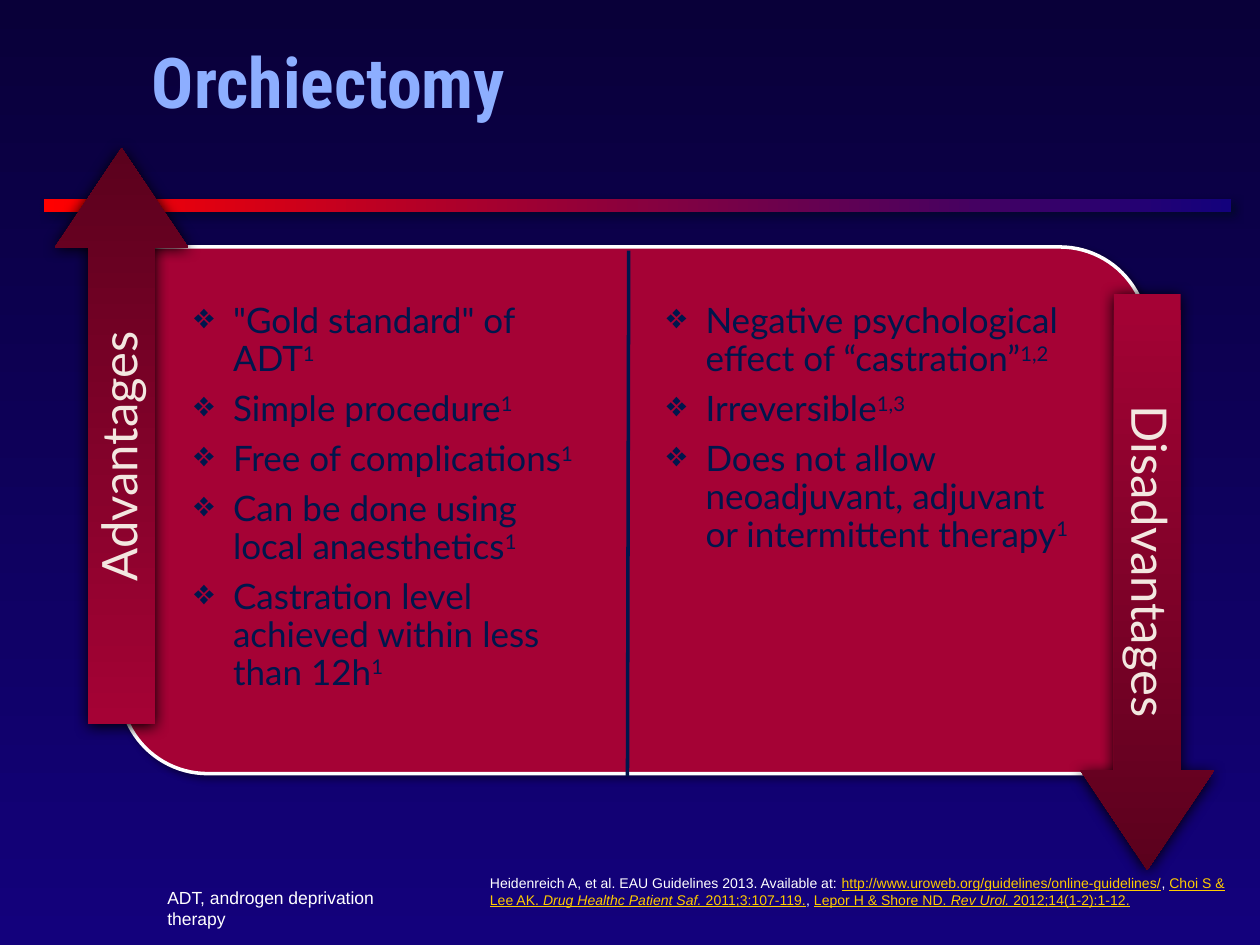
from lxml.etree import SubElement
from pptx import Presentation
from pptx.dml.color import RGBColor
from pptx.enum.shapes import MSO_CONNECTOR as Connector, MSO_SHAPE as Shape
from pptx.enum.text import MSO_ANCHOR as Anchor, MSO_AUTO_SIZE as AutoSize, PP_ALIGN as Align
from pptx.oxml.ns import qn
from pptx.util import Inches, Pt

NAVY, CRIMSON, WHITE, YELLOW = "00164C", "A50235", "FFFFFF", "FFCC00"
MIDNIGHT, INDIGO = "090039", "13017C"

ADVANTAGES = [
    ("\"Gold standard\" of ADT", "1"),
    ("Simple procedure", "1"),
    ("Free of complications", "1"),
    ("Can be done using local anaesthetics", "1"),
    ("Castration level achieved within less than 12h", "1"),
]
DISADVANTAGES = [
    ("Negative psychological effect of “castration”", "1,2"),
    ("Irreversible", "1,3"),
    ("Does not allow neoadjuvant, adjuvant or intermittent therapy", "1"),
]
REFERENCES = [
    ("Heidenreich A, et al. EAU Guidelines 2013. Available at: ", "plain"),
    ("http://www.uroweb.org/guidelines/online-guidelines/", "link"),
    (", ", "plain"),
    ("Choi S & Lee AK. ", "link"),
    ("Drug Healthc Patient Saf.", "journal"),
    (" 2011;3:107-119.", "link"),
    (", ", "plain"),
    ("Lepor H & Shore ND. ", "link"),
    ("Rev Urol.", "journal"),
    (" 2012;14(1-2):1-12.", "link"),
]


def color(value):
    return RGBColor.from_string(value)


def paint_gradient(fill, start, end, angle=0):
    fill.gradient()
    fill.gradient_angle = angle
    for stop, value in zip(fill.gradient_stops, (start, end)):
        stop.color.rgb = color(value)


def cast_shadow(shape, value, opacity, blur, distance, angle):
    shape.shadow.inherit = False
    effects = shape._element.spPr.find(qn("a:effectLst"))
    outer = SubElement(effects, qn("a:outerShdw"), blurRad=str(Pt(blur)),
                       dist=str(Pt(distance)), dir=str(angle * 60000), rotWithShape="0")
    tint = SubElement(outer, qn("a:srgbClr"), val=value)
    SubElement(tint, qn("a:alpha"), val=str(opacity * 1000))


def set_margins(frame, left, top, right, bottom):
    frame.margin_left, frame.margin_top = Inches(left), Inches(top)
    frame.margin_right, frame.margin_bottom = Inches(right), Inches(bottom)


def add_run(paragraph, text, size, font, value):
    run = paragraph.add_run()
    run.text = text
    run.font.size, run.font.name = Pt(size), font
    run.font.color.rgb = color(value)
    return run


def add_frame(slide, left, top, width, height):
    box = slide.shapes.add_textbox(Inches(left), Inches(top), Inches(width), Inches(height))
    box.text_frame.word_wrap = True
    return box.text_frame


def add_block(slide, kind, left, top, width, height):
    block = slide.shapes.add_shape(kind, Inches(left), Inches(top), Inches(width), Inches(height))
    block.line.fill.background()
    return block


def add_title(slide, text):
    frame = add_frame(slide, 0.98, 0.23, 5.88, 0.8)
    frame.vertical_anchor = Anchor.BOTTOM
    heading = frame.paragraphs[0]
    heading.line_spacing = 0.9
    add_run(heading, text, 40, "Roboto Condensed", "8DAEFF").font.bold = True


def add_rule(slide):
    rule = add_block(slide, Shape.RECTANGLE, 0.35, 1.58, 9.42, 0.1)
    paint_gradient(rule.fill, "FF0000", INDIGO)
    cast_shadow(rule, "000B26", 75, 5, 3, 45)


def add_panel(slide):
    panel = add_block(slide, Shape.ROUND_2_DIAG_RECTANGLE, 0.95, 1.96, 8.16, 4.18)
    panel.adjustments[0], panel.adjustments[1] = 0, 0.167
    panel.fill.solid()
    panel.fill.fore_color.rgb = color(CRIMSON)
    panel.line.color.rgb = color(WHITE)
    panel.line.width = Pt(2)
    cast_shadow(panel, "000000", 40, 4, 3, 45)


def add_divider(slide):
    divider = slide.shapes.add_connector(
        Connector.STRAIGHT, Inches(4.99), Inches(1.99), Inches(4.98), Inches(6.16))
    divider.line.color.rgb = color(NAVY)
    divider.line.width = Pt(2)
    SubElement(divider._element.spPr, qn("a:effectLst"))


def add_points(slide, left, width, height, points):
    frame = add_frame(slide, left, 2.34, width, height)
    set_margins(frame, 0.07, 0.07, 0.07, 0.07)
    for index, (point, citation) in enumerate(points):
        paragraph = frame.add_paragraph() if index else frame.paragraphs[0]
        paragraph.line_spacing, paragraph.space_after = 0.9, Pt(7)
        properties = paragraph._p.get_or_add_pPr()
        properties.set("marL", str(Inches(0.31)))
        properties.set("indent", str(Inches(-0.31)))
        SubElement(properties, qn("a:buChar"), char="❖")
        add_run(paragraph, point, 20, "Lato", NAVY)
        raised = add_run(paragraph, citation, 20, "Lato", NAVY)
        raised.font._element.set("baseline", "30000")


def add_arrow(slide, left, top, rotation, label):
    arrow = add_block(slide, Shape.RIGHT_ARROW, left, top, 4.57, 1.06)
    arrow.rotation = rotation
    arrow.adjustments[0], arrow.adjustments[1] = 0.5, 0.745
    paint_gradient(arrow.fill, CRIMSON, "5B011D")
    cast_shadow(arrow, "000000", 100, 8.5, 1, 90)
    frame = arrow.text_frame
    frame.word_wrap, frame.vertical_anchor = True, Anchor.MIDDLE
    set_margins(frame, 0.07, 0.07, 0, 0.07)
    paragraph = frame.paragraphs[0]
    paragraph.alignment, paragraph.line_spacing = Align.CENTER, 0.9
    add_run(paragraph, label, 28, "Lato", "F3E7E0")


def add_references(slide):
    frame = add_frame(slide, 3.79, 6.89, 6.14, 0.37)
    frame.auto_size = AutoSize.SHAPE_TO_FIT_TEXT
    for text, role in REFERENCES:
        linked = role != "plain"
        run = add_run(frame.paragraphs[0], text, 8, "Arial", YELLOW if linked else WHITE)
        run.font.underline = linked
        run.font.italic = role == "journal"


def add_abbreviation(slide, text):
    frame = add_frame(slide, 1.23, 6.99, 2.16, 0.44)
    frame.auto_size = AutoSize.SHAPE_TO_FIT_TEXT
    add_run(frame.paragraphs[0], text, 10, "Arial", WHITE)


def main():
    deck = Presentation()
    deck.slide_width, deck.slide_height = Inches(10), Inches(7.5)
    slide = deck.slides.add_slide(deck.slide_layouts[6])
    paint_gradient(slide.background.fill, MIDNIGHT, INDIGO, 270)
    add_rule(slide)
    add_title(slide, " Orchiectomy")
    add_panel(slide)
    add_divider(slide)
    add_points(slide, 1.47, 3.23, 3.29, ADVANTAGES)
    add_points(slide, 5.22, 3.44, 2.21, DISADVANTAGES)
    add_arrow(slide, -1.32, 2.93, 270, "Advantages")
    add_arrow(slide, 6.82, 4.09, 90, "Disadvantages")
    add_references(slide)
    add_abbreviation(slide, "ADT, androgen deprivation therapy")
    deck.save("out.pptx")


if __name__ == "__main__":
    main()
